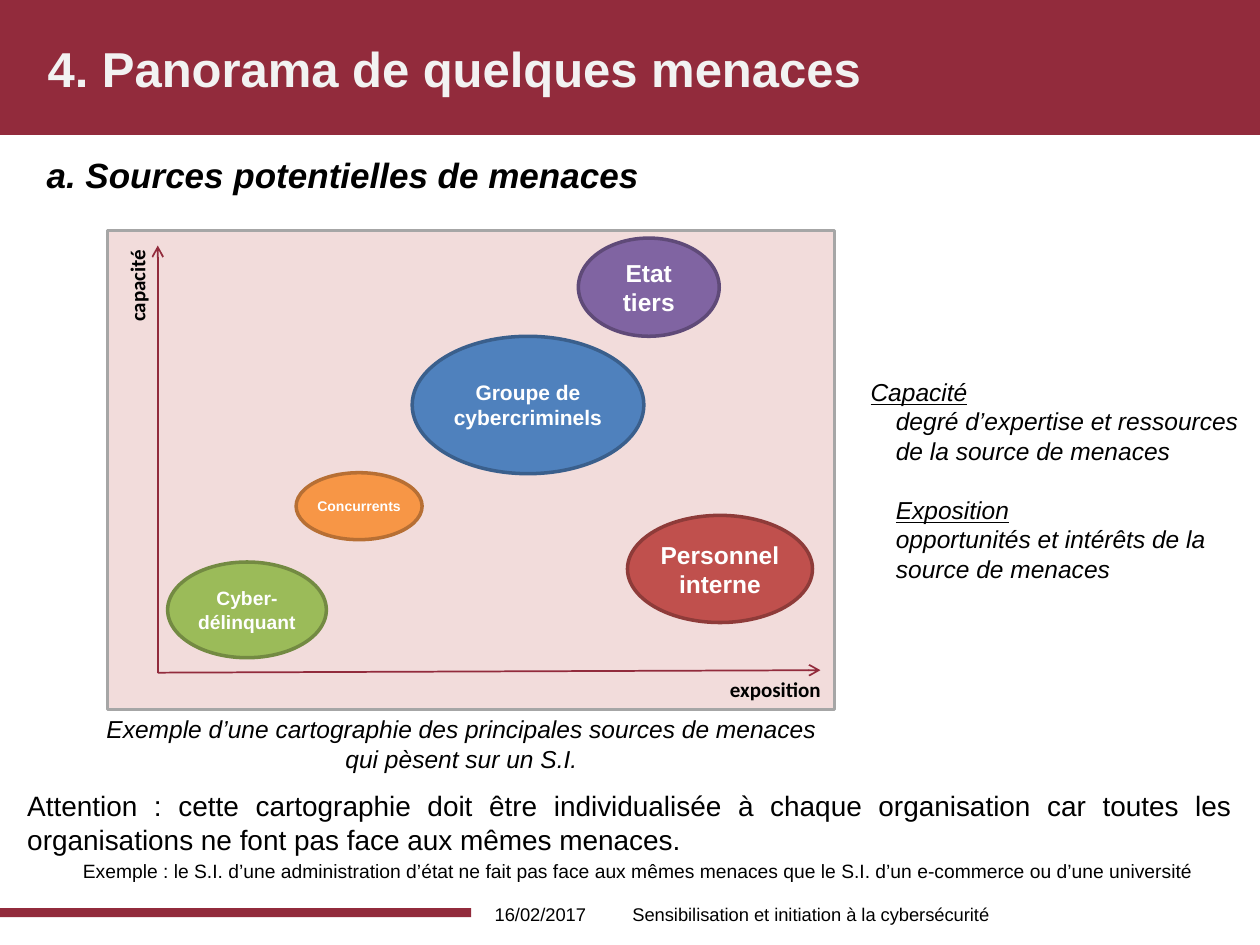
import pptx
import pptx.util
import pptx.dml.color
import pptx.enum.shapes
import pptx.enum.text
from dataclasses import dataclass
from lxml import etree
from pptx.oxml.ns import qn

Cm, Pt = pptx.util.Cm, pptx.util.Pt
Align = pptx.enum.text.PP_ALIGN
Anchor = pptx.enum.text.MSO_ANCHOR
Shape = pptx.enum.shapes.MSO_SHAPE


@dataclass(frozen=True)
class Theme:
    # Colours
    wine: str = "922B3C"
    pale: str = "F2F2F2"
    rose: str = "F2DCDB"
    grey: str = "A6A6A6"
    black: str = "000000"
    white: str = "FFFFFF"
    # Fonts and type sizes
    font: str = "Arial"
    label: str = "Calibri"
    title: float = 28
    head: float = 20
    note: float = 16
    text: float = 14
    axis: float = 12
    small: float = 11
    foot: float = 10.5


THEME = Theme()

# Threat sources: text, size, fill, outline, box in cm
THREATS = [
    ("Groupe de cybercriminels", 12, "4F81BD", "3A5F8C", (8.31, 6.78, 4.67, 2.77)),
    ("Cyber-délinquant", 11, "9BBB59", "738A42", (3.38, 11.33, 3.2, 1.93)),
    ("Etat tiers", 14, "8064A2", "5F4A78", (11.66, 4.8, 2.84, 1.98)),
    ("Personnel interne", 14, "C0504D", "8E3B39", (12.65, 10.39, 3.73, 2.16)),
    ("Concurrents", 8, "F79646", "B76F34", (5.97, 9.53, 2.54, 1.35)),
]


def rgb(code):
    return pptx.dml.color.RGBColor.from_string(code)


def lengths(box):
    return [Cm(value) for value in box]


def set_frame(frame, anchor=Anchor.TOP, sides=0.25, ends=0.13):
    frame.word_wrap = True
    frame.vertical_anchor = anchor
    frame.margin_left = frame.margin_right = Cm(sides)
    frame.margin_top = frame.margin_bottom = Cm(ends)


def add_text(frame, text, size, color=THEME.black, name=THEME.font, align=Align.LEFT,
             bold=False, italic=False, under=False, before=0, indent=0):
    """Fill the empty first paragraph, or append another one."""
    para = frame.paragraphs[-1]
    if para.runs:
        para = frame.add_paragraph()
    para.alignment = align
    para.space_before = Pt(before)
    if indent:
        para._p.get_or_add_pPr().set("marL", str(Cm(indent)))
    run = para.add_run()
    run.text = text
    font = run.font
    font.name, font.size = name, Pt(size)
    font.bold, font.italic, font.underline = bold, italic, under
    font.color.rgb = rgb(color)


def add_box(slide, box, anchor=Anchor.TOP, sides=0.25):
    area = slide.shapes.add_textbox(*lengths(box))
    set_frame(area.text_frame, anchor, sides)
    return area


def add_form(slide, kind, box, fill, line=None, width=0):
    form = slide.shapes.add_shape(kind, *lengths(box))
    form.shadow.inherit = False
    form.fill.solid()
    form.fill.fore_color.rgb = rgb(fill)
    if line:
        form.line.color.rgb = rgb(line)
        form.line.width = Pt(width)
    else:
        form.line.fill.background()
    return form


def add_threat(slide, text, size, fill, line, box):
    form = add_form(slide, Shape.OVAL, box, fill, line, 2)
    set_frame(form.text_frame, Anchor.MIDDLE, 0, 0.1)
    add_text(form.text_frame, text, size, THEME.white, align=Align.CENTER, bold=True)


def add_axis(slide, start, end):
    kind = pptx.enum.shapes.MSO_CONNECTOR.STRAIGHT
    axis = slide.shapes.add_connector(kind, *lengths(start + end))
    axis.line.color.rgb = rgb(THEME.wine)
    axis.line.width = Pt(1)
    etree.SubElement(axis.line._get_or_add_ln(), qn("a:tailEnd"), type="arrow")
    etree.SubElement(axis._element.spPr, qn("a:effectLst"))


def add_label(slide, text, box, turn=0):
    area = add_box(slide, box, sides=0.1)
    area.rotation = turn
    add_text(area.text_frame, text, THEME.axis, name=THEME.label,
             align=Align.CENTER, bold=True)


def add_title(slide, text, box):
    title = slide.shapes.title
    title.left, title.top, title.width, title.height = lengths(box)
    set_frame(title.text_frame, Anchor.MIDDLE)
    add_text(title.text_frame, text, THEME.title, THEME.pale, bold=True)


def add_map(slide):
    add_form(slide, Shape.RECTANGLE, (2.16, 4.65, 14.66, 9.65),
             THEME.rose, THEME.grey, 1.75)
    base = (3.18, 13.56)
    for end in ((3.18, 4.95), (16.54, 13.51)):
        add_axis(slide, base, end)
    for threat in THREATS:
        add_threat(slide, *threat)
    add_label(slide, "exposition", (14.17, 13.51, 2.92, 0.76))
    add_label(slide, "capacité", (1.3, 5.38, 2.92, 0.76), 270)
    frame = add_box(slide, (1.7, 14.27, 15.21, 1.45)).text_frame
    add_text(frame, "Exemple d’une cartographie des principales sources de menaces "
             "qui pèsent sur un S.I.", THEME.text, align=Align.CENTER, italic=True)


def add_legend(slide):
    frame = add_box(slide, (17.3, 7.47, 8.1, 4.45)).text_frame
    rows = [
        ("Capacité", True, 0, 0),
        ("degré d’expertise et ressources de la source de menaces", False, 0, 0.51),
        ("Exposition", True, 17, 0.51),
        ("opportunités et intérêts de la source de menaces", False, 0, 0.51),
    ]
    for text, under, before, indent in rows:
        add_text(frame, text, THEME.text, italic=True, under=under,
                 before=before, indent=indent)


def add_note(slide):
    frame = add_box(slide, (0.3, 15.77, 24.79, 2.1)).text_frame
    add_text(frame, "Attention : cette cartographie doit être individualisée à chaque "
             "organisation car toutes les organisations ne font pas face aux mêmes "
             "menaces.", THEME.note, align=Align.JUSTIFY)
    add_text(frame, "Exemple : le S.I. d’une administration d’état ne fait pas face aux "
             "mêmes menaces que le S.I. d’un e-commerce ou d’une université",
             THEME.small, align=Align.JUSTIFY, before=2.2, indent=1.12)


def add_footer(slide):
    cells = [
        ("16/02/2017", (9.5, 17.91, 2.79, 1.02), Align.CENTER),
        ("Sensibilisation et initiation à la cybersécurité",
         (12.5, 17.91, 8.43, 1.02), Align.LEFT),
    ]
    for text, box, align in cells:
        frame = add_box(slide, box, Anchor.MIDDLE).text_frame
        add_text(frame, text, THEME.foot, align=align)


def main():
    deck = pptx.Presentation()
    deck.slide_width, deck.slide_height = Cm(25.4), Cm(19.05)
    slide = deck.slides.add_slide(deck.slide_layouts[5])

    # Coloured bands, kept behind the title
    for box in ((0, 0, 25.4, 2.72), (0, 18.31, 9.5, 0.18)):
        band = add_form(slide, Shape.RECTANGLE, box, THEME.wine)
        slide.shapes.title._element.addprevious(band._element)

    # Headings
    add_title(slide, "4. Panorama de quelques menaces", (0.71, 0.03, 24.21, 2.69))
    frame = add_box(slide, (0.69, 2.97, 24.21, 1.6)).text_frame
    add_text(frame, "a. Sources potentielles de menaces", THEME.head,
             bold=True, italic=True)

    # Threat map with its legend, then the notes
    add_map(slide)
    add_legend(slide)
    add_note(slide)
    add_footer(slide)
    deck.save("out.pptx")


if __name__ == "__main__":
    main()
